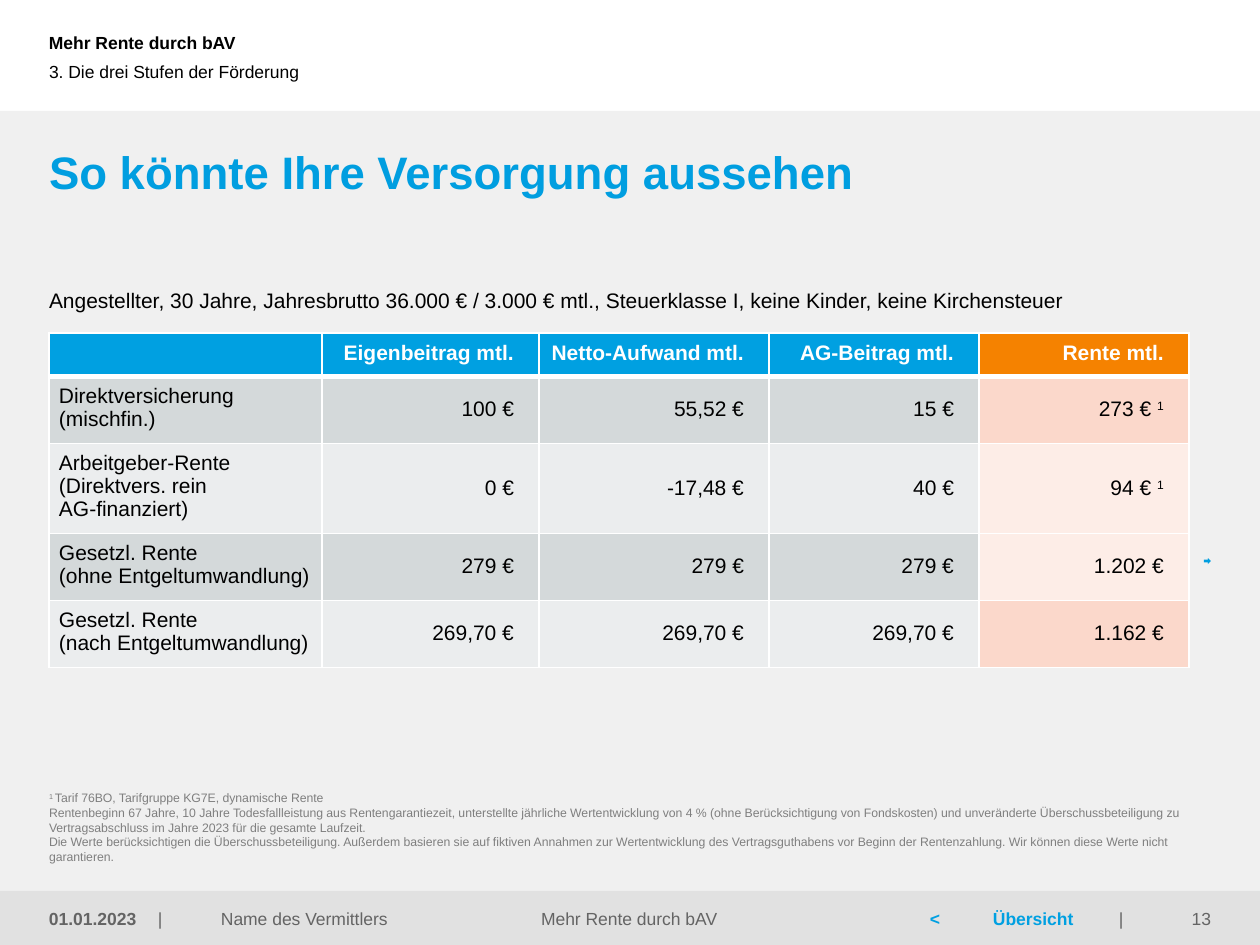
from copy import deepcopy
from lxml import etree
from pptx import Presentation
from pptx import util as u
from pptx.dml.color import RGBColor
from pptx.enum import shapes, text
from pptx.oxml.ns import qn

COLORS = {
    "white": "FFFFFF", "black": "000000", "canvas": "F0F0F0", "footer": "E1E1E1",
    "blue": "00A0E1", "title": "009EE0", "orange": "F58200", "muted": "646464",
    "note": "7F7F7F", "dark_row": "D4D9DA", "light_row": "EBEDEE",
    "dark_rente": "FBD8CB", "light_rente": "FDEDE7",
}
LEFT, CENTER, RIGHT = text.PP_ALIGN.LEFT, text.PP_ALIGN.CENTER, text.PP_ALIGN.RIGHT
TOP, MIDDLE, BOTTOM = text.MSO_ANCHOR.TOP, text.MSO_ANCHOR.MIDDLE, text.MSO_ANCHOR.BOTTOM


def px(length):
    return u.Emu(round(length * 914400 / 126))


def rgb(name):
    return RGBColor.from_string(COLORS[name])


class SlideBuilder:
    font = "Arial"

    def __init__(self, slide):
        self.slide = slide

    def place(self, shape, box):
        shape.left, shape.top, shape.width, shape.height = map(px, box)

    def shape(self, kind, box, color):
        item = self.slide.shapes.add_shape(kind, *map(px, box))
        item.shadow.inherit = False
        item.fill.solid()
        item.fill.fore_color.rgb = rgb(color)
        item.line.fill.background()

    def run(self, paragraph, content, size, color, bold=False, raised=False):
        for number, line in enumerate(content.split("\n")):
            run = paragraph.add_run()
            run.text = line
            run.font.name = self.font
            run.font.size = u.Pt(size)
            run.font.bold = bold
            run.font.color.rgb = rgb(color)
            props = run._r.get_or_add_rPr()
            if raised:
                props.set("baseline", "30000")
            if number:
                line_break = etree.Element(qn("a:br"))
                line_break.append(deepcopy(props))
                run._r.addprevious(line_break)

    def paragraph(self, paragraph, runs, align=LEFT, spacing=None, hanging=0, tabs=()):
        props = paragraph._p.get_or_add_pPr()
        props.set("marL", str(px(hanging)))
        props.set("indent", str(-px(hanging)))
        etree.SubElement(props, qn("a:buNone"))
        if tabs:
            stops = etree.SubElement(props, qn("a:tabLst"))
            for stop in tabs:
                etree.SubElement(stops, qn("a:tab"), pos=str(px(stop)), algn="l")
        paragraph.alignment = align
        paragraph.space_before = u.Pt(0)
        if spacing:
            paragraph.line_spacing = spacing
        for args in runs:
            self.run(paragraph, *args)

    def frame(self, frame, anchor, insets):
        frame.word_wrap = True
        frame.auto_size = text.MSO_AUTO_SIZE.NONE
        frame.vertical_anchor = anchor
        (frame.margin_left, frame.margin_top,
         frame.margin_right, frame.margin_bottom) = map(px, insets)

    def label(self, box, runs, align=LEFT, insets=(0, 0, 0, 0), tabs=()):
        frame = self.slide.shapes.add_textbox(*map(px, box)).text_frame
        self.frame(frame, MIDDLE, insets)
        self.paragraph(frame.paragraphs[0], runs, align, tabs=tabs)

    def placeholder(self, index, box, paragraphs, anchor=TOP, insets=(0, 0, 0, 0)):
        holder = self.slide.placeholders[index]
        self.slide.shapes._spTree.append(holder._element)
        self.place(holder, box)
        self.frame(holder.text_frame, anchor, insets)
        for number, options in enumerate(paragraphs):
            frame = holder.text_frame
            target = frame.add_paragraph() if number else frame.paragraphs[0]
            self.paragraph(target, **options)

    def drop_placeholder(self, index):
        element = self.slide.placeholders[index]._element
        element.getparent().remove(element)

    def borders(self, cell, widths):
        props = cell._tc.get_or_add_tcPr()
        for side, width in zip("LRTB", widths):
            line = etree.SubElement(props, qn(f"a:ln{side}"), w=str(u.Pt(width)))
            fill = etree.SubElement(line, qn("a:solidFill"))
            etree.SubElement(fill, qn("a:srgbClr"), val=COLORS["white"])

    def cell(self, cell, paragraphs, fill, align, anchor, widths):
        self.borders(cell, widths)
        cell.fill.solid()
        cell.fill.fore_color.rgb = rgb(fill)
        cell.vertical_anchor = anchor
        cell.margin_left = px(10)
        cell.margin_top = cell.margin_bottom = px(9)
        cell.margin_right = px(25 if align == RIGHT else 10)
        for number, runs in enumerate(paragraphs):
            frame = cell.text_frame
            target = frame.add_paragraph() if number else frame.paragraphs[0]
            self.paragraph(target, runs, align, 0.97)
            etree.SubElement(target._p, qn("a:endParaRPr"), sz="1200")

    def table(self, left, top, widths, heights, header, rows):
        box = (left, top, sum(widths), sum(heights))
        table = self.slide.shapes.add_table(
            len(heights), len(widths), *map(px, box)).table
        for column, width in zip(table.columns, widths):
            column.width = px(width)
        for row, height in zip(table.rows, heights):
            row.height = px(height)
        last = len(widths) - 1
        for c, heading in enumerate(header):
            runs = [(heading, 12, "white", True)] if heading else []
            fill = "orange" if c == last else "blue"
            self.cell(table.cell(0, c), [runs], fill, RIGHT, TOP, (1, 1, 1, 3))
        for r, (names, amounts, note, rente_fill) in enumerate(rows, 1):
            edges = (1, 1, 3 if r == 1 else 1, 1)
            row_fill = "dark_row" if r % 2 else "light_row"
            self.cell(table.cell(r, 0), [[(name, 12, "black")] for name in names],
                      row_fill, LEFT, TOP, edges)
            for c, amount in enumerate(amounts, 1):
                runs = [(amount, 12, "black")]
                if c == last and note:
                    runs = [(amount + " ", 12, "black"), (note, 12, "black", False, True)]
                self.cell(table.cell(r, c), [runs],
                          rente_fill if c == last else row_fill, RIGHT, MIDDLE, edges)


def main():
    deck = Presentation()
    deck.slide_width, deck.slide_height = px(1260), px(945)
    page = SlideBuilder(deck.slides.add_slide(deck.slide_layouts[4]))
    margin, footer_top, footer_height = 49, 891, 54
    topic = "Mehr Rente durch bAV"

    page.shape(shapes.MSO_SHAPE.RECTANGLE, (0, 111, 1260, 834), "canvas")
    page.shape(shapes.MSO_SHAPE.RECTANGLE, (0, footer_top, 1260, footer_height), "footer")
    page.label((158, footer_top, 305, footer_height),
               [("|\tName des Vermittlers", 10, "muted")], tabs=(24,))
    page.label((867, footer_top, 305, footer_height),
               [("\t<\tÜbersicht", 10, "blue", True), ("\t|", 10, "muted")],
               tabs=(176, 196, 296))
    page.label((0, 0, 880, 85), [(topic, 10, "black", True)], insets=(margin, 6, 13, 6))

    page.table(
        margin, 333, (273, 217, 230, 210, 210), (43, 67, 90, 67, 67),
        ("", "Eigenbeitrag mtl.", "Netto-Aufwand mtl.", "AG-Beitrag mtl.", "Rente mtl."),
        [
            (["Direktversicherung\n(mischfin.)"],
             ("100 €", "55,52 €", "15 €", "273 €"), "1", "dark_rente"),
            (["Arbeitgeber-Rente", "(Direktvers. rein", "AG-finanziert)"],
             ("0 €", "-17,48 €", "40 €", "94 €"), "1", "light_rente"),
            (["Gesetzl. Rente\n(ohne Entgeltumwandlung)"],
             ("279 €", "279 €", "279 €", "1.202 €"), "", "light_rente"),
            (["Gesetzl. Rente\n(nach Entgeltumwandlung)"],
             ("269,70 €", "269,70 €", "269,70 €", "1.162 €"), "", "dark_rente"),
        ])

    page.placeholder(0, (margin, 144, 1162, 69), [
        {"runs": [("So könnte Ihre Versorgung aussehen", 26, "title", True)]}])
    page.placeholder(1, (margin, 287, 1162, 37), [
        {"runs": [("Angestellter, 30 Jahre, Jahresbrutto 36.000 € / 3.000 € mtl., "
                   "Steuerklasse I, keine Kinder, keine Kirchensteuer", 12, "black")]}])
    page.placeholder(2, (0, 32, 901, 79), [
        {"runs": [("3. Die drei Stufen der Förderung", 10, "black")]}],
        MIDDLE, (margin, 0, 0, 0))

    page.label((0, footer_top, 154, footer_height),
               [("01.01.2023", 10, "muted", True)], insets=(margin, 6, 13, 6))
    page.label((369, footer_top, 520, footer_height), [(topic, 10, "muted")], CENTER)
    page.label((1142, footer_top, 118, footer_height),
               [("13", 10, "muted")], RIGHT, (13, 6, margin, 6))

    conditions = (
        "Rentenbeginn 67 Jahre, 10 Jahre Todesfallleistung aus Rentengarantiezeit, "
        "unterstellte jährliche Wertentwicklung von 4 % (ohne Berücksichtigung von "
        "Fondskosten) und unveränderte Überschussbeteiligung zu Vertragsabschluss im "
        "Jahre 2023 für die gesamte Laufzeit.\n"
        "Die Werte berücksichtigen die Überschussbeteiligung. Außerdem basieren sie auf "
        "fiktiven Annahmen zur Wertentwicklung des Vertragsguthabens vor Beginn der "
        "Rentenzahlung. Wir können diese Werte nicht garantieren.")
    page.placeholder(3, (margin, 849, 1160, 15), [
        {"runs": [("1 ", 7, "note", False, True),
                  ("Tarif 76BO, Tarifgruppe KG7E, dynamische Rente", 7, "note")],
         "hanging": 13, "spacing": u.Pt(8.4)},
        {"runs": [(conditions, 7, "note")], "spacing": u.Pt(8.4)}], BOTTOM)
    page.drop_placeholder(4)
    page.shape(shapes.MSO_SHAPE.RIGHT_ARROW, (1204, 558, 7, 6), "title")
    deck.save("out.pptx")


if __name__ == "__main__":
    main()
